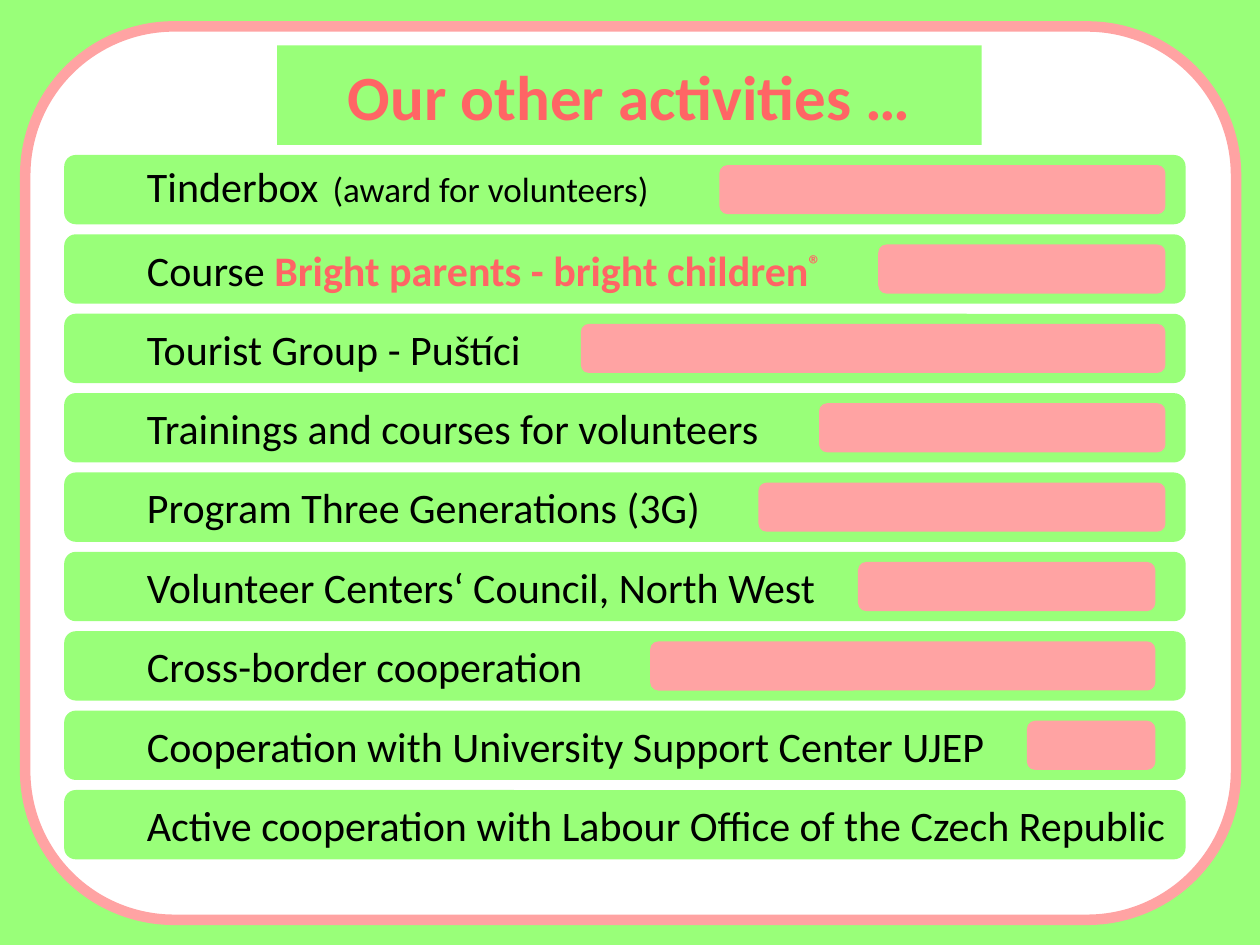
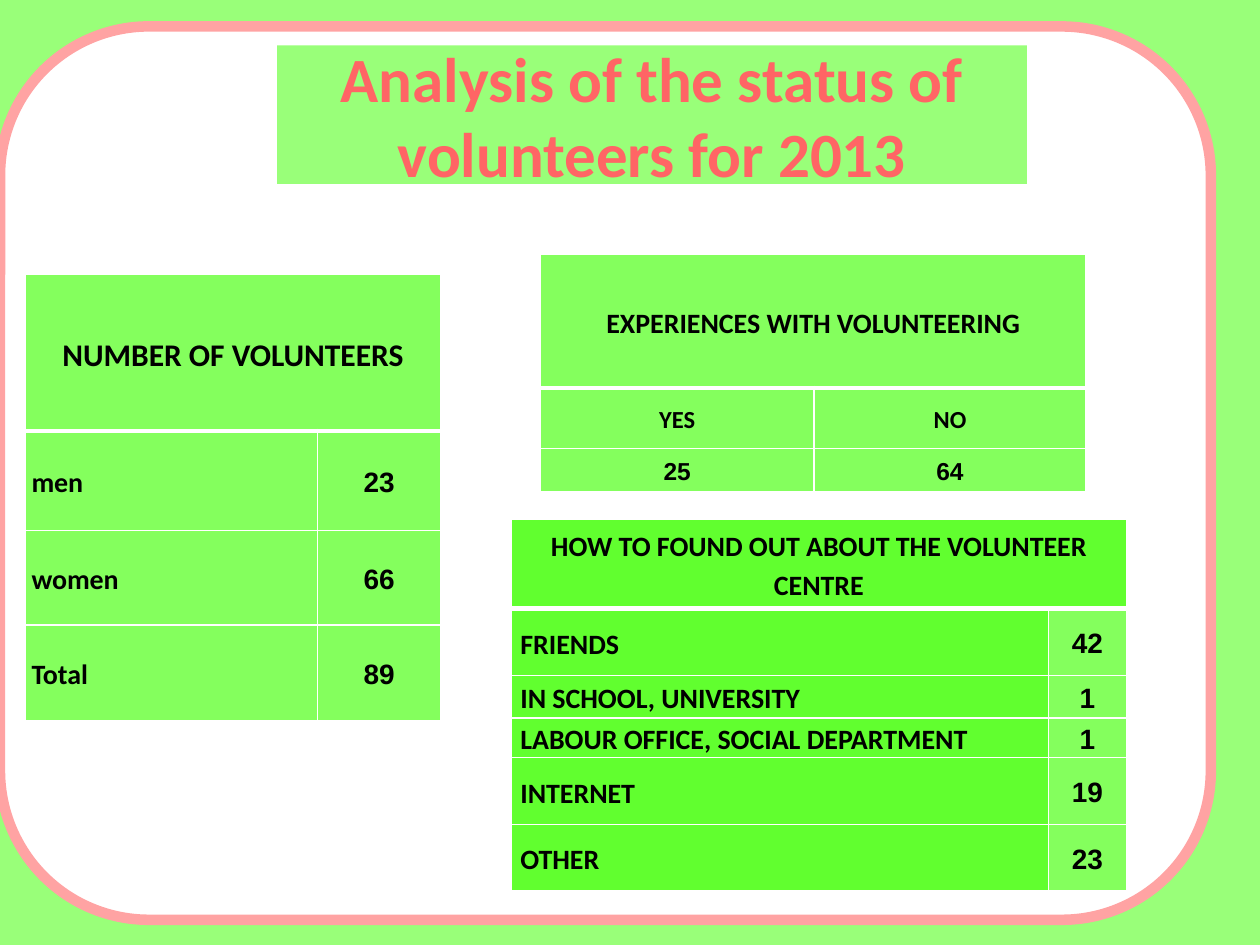
from dataclasses import dataclass

from lxml.etree import SubElement
from pptx import Presentation
from pptx.dml.color import RGBColor
from pptx.enum.shapes import MSO_SHAPE
from pptx.enum.text import MSO_ANCHOR, PP_ALIGN
from pptx.oxml.ns import qn
from pptx.util import Inches, Pt

# Grid: 100 columns by 75 rows
WIDE, HIGH = Inches(10), Inches(7.5)
COLS, ROWS = 100, 75

# Shared look
GREEN, PINK, RED = "99FF79", "FFA3A3", "FF6565"
WHITE, BLACK = "FFFFFF", "000000"
LIME, VIVID = "84FF5D", "61FF2F"
SANS, DIGIT = "Calibri", "Arial"


@dataclass(frozen=True)
class Box:
    col: float
    row: float
    wide: float
    high: float

    def place(self) -> tuple[int, int, int, int]:
        return (across(self.col), down(self.row), across(self.wide), down(self.high))


@dataclass(frozen=True)
class Piece:
    text: str
    size: float = 24
    tint: str = BLACK
    bold: bool = False
    raised: bool = False


@dataclass(frozen=True)
class Entry:
    words: list[Piece]
    bar: tuple[float, float] | None = None  # left and right column
    anchor: MSO_ANCHOR = MSO_ANCHOR.MIDDLE


@dataclass(frozen=True)
class Sheet:
    box: Box
    cols: list[float]
    rows: list[float]
    head: str
    body: list[tuple[str, str]]
    sizes: tuple[int, int]  # head and body text
    fill: str
    pad: float
    listed: bool = True  # labels stand at the left


def across(count: float) -> int:
    return round(WIDE * count / COLS)


def down(count: float) -> int:
    return round(HIGH * count / ROWS)


def paint(hue: str) -> RGBColor:
    return RGBColor.from_string(hue)


def flood(fill, hue: str) -> None:
    fill.solid()
    fill.fore_color.rgb = paint(hue)


def style(run, size: float, hue: str, bold: bool, face: str = SANS) -> None:
    run.font.name, run.font.size, run.font.bold = face, Pt(size), bold
    run.font.color.rgb = paint(hue)


def draw(slide, kind: MSO_SHAPE, box: Box, hue: str, edge: str = ""):
    shape = slide.shapes.add_shape(kind, *box.place())
    shape.shadow.inherit = False
    flood(shape.fill, hue)
    if edge:
        shape.line.color.rgb = paint(edge)
        shape.line.width = Pt(6)
    else:
        shape.line.fill.background()
    return shape


def start(deck, text: str, frame: Box, band: Box):
    """Add a slide with its backdrop, frame and title band."""
    slide = deck.slides.add_slide(deck.slide_layouts[5])
    draw(slide, MSO_SHAPE.RECTANGLE, Box(0, 0, COLS, ROWS), GREEN)
    draw(slide, MSO_SHAPE.ROUNDED_RECTANGLE, frame, WHITE, PINK)

    title = slide.shapes.title
    title.left, title.top, title.width, title.height = band.place()
    geom = SubElement(title.element.spPr, qn("a:prstGeom"), prst="roundRect")
    SubElement(geom, qn("a:avLst"))
    flood(title.fill, GREEN)
    title.text_frame.text = text
    title.text_frame.word_wrap = True
    title.text_frame.vertical_anchor = MSO_ANCHOR.MIDDLE
    line = title.text_frame.paragraphs[0]
    line.alignment = PP_ALIGN.CENTER
    style(line.runs[0], 36, RED, True)
    slide.shapes.element.append(title.element)  # bring to the front
    return slide


def add_entry(slide, entry: Entry, row: float) -> None:
    strip = draw(slide, MSO_SHAPE.ROUNDED_RECTANGLE, Box(5.1, row, 89, 5.5), GREEN)
    frame = strip.text_frame
    frame.word_wrap = True
    frame.margin_left, frame.margin_right = across(6.3), across(0.5)
    frame.vertical_anchor = entry.anchor
    line = frame.paragraphs[0]
    line.alignment = PP_ALIGN.LEFT
    for piece in entry.words:
        run = line.add_run()
        run.text = piece.text
        style(run, piece.size, piece.tint, piece.bold)
        if piece.raised:
            run.font._element.set("baseline", "30000")
    if entry.bar:
        left, right = entry.bar
        draw(slide, MSO_SHAPE.ROUNDED_RECTANGLE,
             Box(left, row + 0.8, right - left, 3.9), PINK)


def rule(cell, top: float, base: float) -> None:
    """Set white cell borders, one point at the sides."""
    props = cell._tc.get_or_add_tcPr()
    sides = {"lnL": 1, "lnR": 1, "lnT": top, "lnB": base}
    for spot, (tag, width) in enumerate(sides.items()):
        edge = SubElement(props, qn(f"a:{tag}"), w=str(Pt(width)))
        fill = SubElement(edge, qn("a:solidFill"))
        SubElement(fill, qn("a:srgbClr"), val=WHITE)
        props.insert(spot, edge)


def add_sheet(slide, sheet: Sheet) -> None:
    table = slide.shapes.add_table(
        len(sheet.rows), len(sheet.cols), *sheet.box.place()).table
    for col, wide in zip(table.columns, sheet.cols):
        col.width = across(wide)
    for row, high in zip(table.rows, sheet.rows):
        row.height = down(high)
    table.cell(0, 0).merge(table.cell(0, 1))

    for r, texts in enumerate([(sheet.head, ""), *sheet.body]):
        for c, text in enumerate(texts):
            cell = table.cell(r, c)
            count = text.isdigit()
            flood(cell.fill, LIME if count else sheet.fill)
            rule(cell, 3 if r == 1 else 1, 3 if r == 0 else 1)
            cell.margin_left = cell.margin_right = across(sheet.pad)
            cell.margin_top = cell.margin_bottom = 0
            cell.vertical_anchor = MSO_ANCHOR.MIDDLE
            if not text:
                continue
            cell.text_frame.text = text
            line = cell.text_frame.paragraphs[0]
            line.line_spacing = 1.15
            label = sheet.listed and r > 0 and c == 0
            line.alignment = PP_ALIGN.LEFT if label else PP_ALIGN.CENTER
            style(line.runs[0], sheet.sizes[min(r, 1)], BLACK, True,
                  DIGIT if count else SANS)


# Slide 1: entries and the bars beside them
ENTRIES = [
    Entry([Piece("Tinderbox"), Piece(" ", 36), Piece("(award for volunteers)", 20)],
          (57.1, 92.5), MSO_ANCHOR.BOTTOM),
    Entry([Piece("Course "), Piece("Bright parents - bright children", 24, RED, True),
           Piece("®", 25, RED, True, True)], (69.7, 92.5)),
    Entry([Piece("Tourist Group - Puštíci")], (46.1, 92.5)),
    Entry([Piece("Trainings and courses for volunteers")], (65, 92.5)),
    Entry([Piece("Program Three Generations (3G)")], (60.2, 92.5)),
    Entry([Piece("Volunteer Centers‘ Council, North West")], (68.1, 91.7)),
    Entry([Piece("Cross-border cooperation")], (51.6, 91.7)),
    Entry([Piece("Cooperation with University Support Center UJEP")], (81.5, 91.7)),
    Entry([Piece("Active cooperation with Labour Office of the Czech Republic")]),
]

# Slide 2: tables
SHEETS = [
    Sheet(Box(2, 21.8, 33, 35.4), [23.2, 9.8], [12.4, 7.9, 7.5, 7.6],
          "NUMBER OF VOLUNTEERS",
          [("men", "23"), ("women", "66"), ("Total", "89")],
          (18, 16), LIME, 0.5),
    Sheet(Box(42.9, 20.2, 43.3, 18.8), [21.7, 21.6], [10.6, 4.8, 3.4],
          "EXPERIENCES WITH VOLUNTEERING",
          [("YES", "NO"), ("25", "64")],
          (16, 14), LIME, 0.5, False),
    Sheet(Box(40.6, 41.2, 48.8, 29.2), [42.6, 6.2], [7.1, 5.3, 3.4, 2.8, 5.3, 5.3],
          "HOW TO FOUND OUT ABOUT THE VOLUNTEER CENTRE",
          [("FRIENDS", "42"), ("IN SCHOOL, UNIVERSITY", "1"),
           ("LABOUR OFFICE, SOCIAL DEPARTMENT", "1"),
           ("INTERNET", "19"), ("OTHER", "23")],
          (16, 16), VIVID, 0.7),
]


def main() -> None:
    deck = Presentation()
    deck.slide_width, deck.slide_height = WIDE, HIGH

    slide = start(deck, "Our other activities …",
                  Box(2, 2.1, 96.1, 70.9), Box(22, 3.6, 55.9, 7.9))
    for step, entry in enumerate(ENTRIES):
        add_entry(slide, entry, 12.3 + 6.3 * step)

    slide = start(deck, "Analysis of the status of volunteers for 2013",
                  Box(0, 2.1, 96.1, 70.9), Box(22, 3.6, 59.5, 11))
    for sheet in SHEETS:
        add_sheet(slide, sheet)

    deck.save("out.pptx")


if __name__ == "__main__":
    main()
